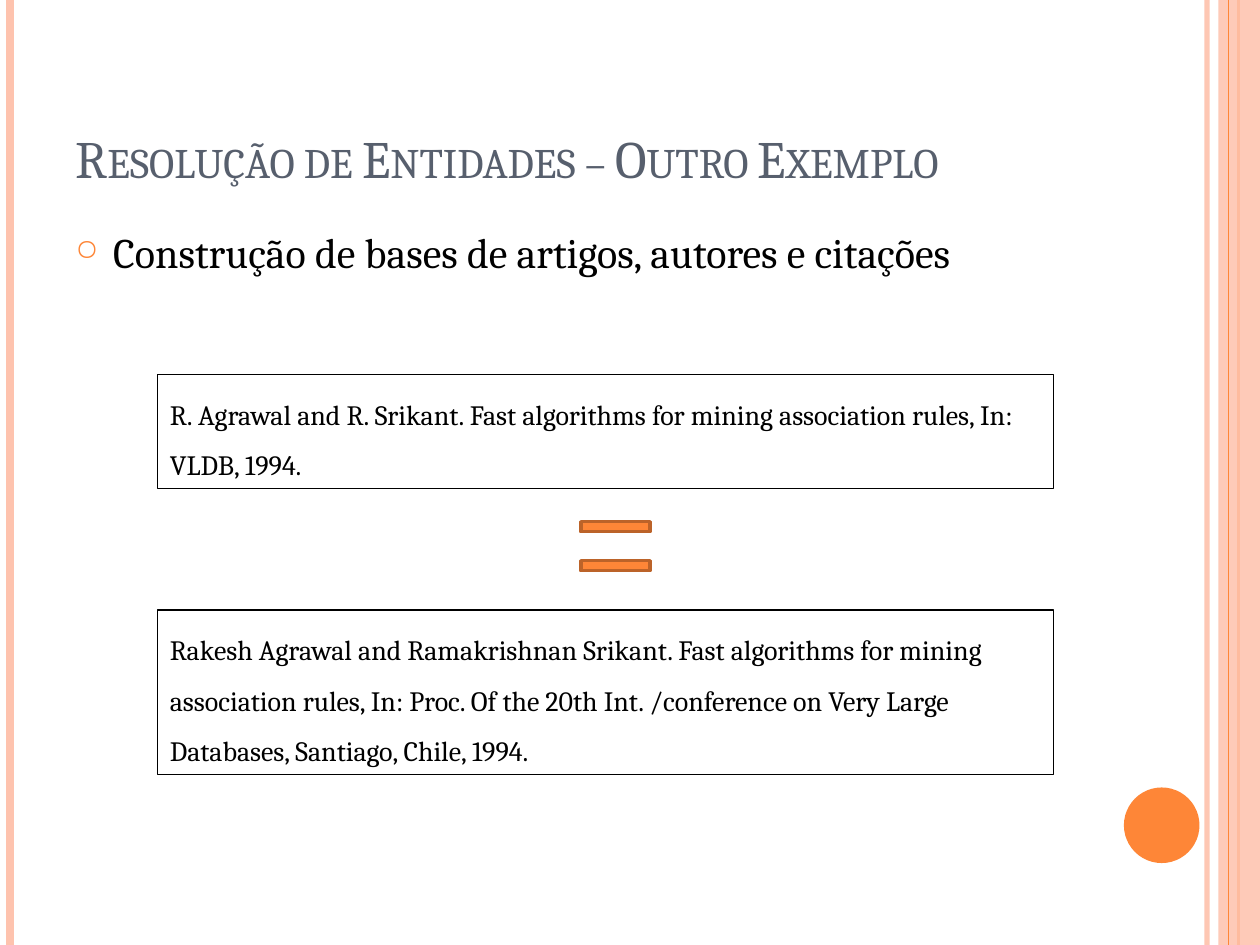
from dataclasses import dataclass

from lxml import etree
from pptx import Presentation
from pptx import util as u
from pptx.dml.color import RGBColor
from pptx.enum import shapes, text
from pptx.oxml import ns

ORANGE = RGBColor(0xFE, 0x86, 0x37)
DARK_ORANGE = RGBColor(0xBC, 0x63, 0x29)
PEACH = RGBColor(0xFE, 0xC3, 0xAE)
SLATE = RGBColor(0x57, 0x5F, 0x6D)
BLACK = RGBColor(0, 0, 0)
SLIDE_HEIGHT = 7.5
FONT = "Cambria"


@dataclass(frozen=True)
class Box:
    left: float
    top: float
    width: float
    height: float

    def lengths(self):
        return [u.Inches(n) for n in (self.left, self.top, self.width, self.height)]


@dataclass(frozen=True)
class Stripe:
    x: float
    color: RGBColor
    weight: float
    opacity: int = 100


@dataclass(frozen=True)
class Citation:
    box: Box
    wording: str


LEFT_STRIPES = (Stripe(9.58, PEACH, 3, 93), Stripe(0.08, PEACH, 4.5), Stripe(9.83, ORANGE, 1.5))
FRONT_STRIPE = Stripe(9.75, ORANGE, 0.75)
CITATIONS = (
    Citation(
        Box(1.25, 2.97, 7.11, 0.91),
        "R. Agrawal and R. Srikant. Fast algorithms for mining association rules, In: VLDB, 1994.",
    ),
    Citation(
        Box(1.25, 4.84, 7.11, 1.31),
        "Rakesh Agrawal and Ramakrishnan Srikant. Fast algorithms for mining association rules, "
        "In: Proc. Of the 20th Int. /conference on Very Large Databases, Santiago, Chile, 1994.",
    ),
)
EQUALS_BARS = [Box(4.61, top, 0.55, 0.08) for top in (4.14, 4.45)]


def apply_format(target, values: dict):
    for name, value in values.items():
        setattr(target, name, value)


def add_element(parent, tag: str, **attributes: str):
    return etree.SubElement(parent, ns.qn(tag), attributes)


def set_opacity(drawn, percent: int):
    if percent < 100:
        color = next(drawn.element.spPr.iter(ns.qn("a:srgbClr")))
        add_element(color, "a:alpha", val=str(percent * 1000))


def draw_stripe(slide, stripe: Stripe):
    x = u.Inches(stripe.x)
    edge = slide.shapes.add_connector(
        shapes.MSO_CONNECTOR.STRAIGHT, x, 0, x, u.Inches(SLIDE_HEIGHT)
    )
    edge.line.color.rgb = stripe.color
    edge.line.width = u.Pt(stripe.weight)
    set_opacity(edge, stripe.opacity)
    add_element(edge.element.spPr, "a:effectLst")


def draw_shape(slide, box: Box, fill: RGBColor | None = None, outline: RGBColor | None = None,
               weight: float = 0.75, kind=shapes.MSO_SHAPE.RECTANGLE):
    drawn = slide.shapes.add_shape(kind, *box.lengths())
    drawn.shadow.inherit = False
    if fill is None:
        drawn.fill.background()
    else:
        drawn.fill.solid()
        drawn.fill.fore_color.rgb = fill
    if outline is None:
        drawn.line.fill.background()
    else:
        drawn.line.color.rgb = outline
        drawn.line.width = u.Pt(weight)
    return drawn


def write(holder, wording: str, size: float, color: RGBColor, anchor=text.MSO_ANCHOR.TOP,
          **paragraph_format):
    frame = holder.text_frame
    apply_format(frame, {"word_wrap": True, "vertical_anchor": anchor})
    paragraph = frame.paragraphs[0]
    apply_format(paragraph, {"alignment": text.PP_ALIGN.LEFT, **paragraph_format})
    run = paragraph.add_run()
    run.text = wording
    apply_format(run.font, {"name": FONT, "size": u.Pt(size)})
    run.font.color.rgb = color
    return paragraph


def draw_title(slide):
    title = slide.shapes.add_textbox(*Box(0.5, 0.3, 8.17, 1.25).lengths())
    heading = write(title, "Resolução de Entidades – Outro Exemplo", 30, SLATE,
                    text.MSO_ANCHOR.BOTTOM)
    heading.runs[0].font.element.set("cap", "small") if hasattr(
        heading.runs[0].font, "element"
    ) else heading.runs[0]._r.get_or_add_rPr().set("cap", "small")


def draw_topic(slide):
    body = slide.shapes.add_textbox(*Box(0.5, 1.75, 8.17, 5.33).lengths())
    topic = write(body, "Construção de bases de artigos, autores e citações", 24, BLACK)
    properties = topic._p.get_or_add_pPr()
    properties.set("marL", str(u.Inches(0.3)))
    properties.set("indent", str(u.Inches(-0.3)))
    bullet_color = add_element(properties, "a:buClr")
    add_element(bullet_color, "a:srgbClr", val=str(ORANGE))
    add_element(properties, "a:buSzPct", val="70000")
    add_element(properties, "a:buChar", char="○")


def draw_citation(slide, citation: Citation):
    frame = draw_shape(slide, citation.box, outline=BLACK)
    write(frame, citation.wording, 16, BLACK, line_spacing=1.5)


def main():
    deck = Presentation()
    apply_format(deck, {"slide_width": u.Inches(10), "slide_height": u.Inches(SLIDE_HEIGHT)})
    slide = deck.slides.add_slide(deck.slide_layouts[6])
    for stripe in LEFT_STRIPES:
        draw_stripe(slide, stripe)
    side_band = draw_shape(slide, Box(9.67, 0, 0.33, SLIDE_HEIGHT), PEACH)
    set_opacity(side_band, 87)
    draw_stripe(slide, FRONT_STRIPE)
    draw_shape(slide, Box(8.92, 6.25, 0.6, 0.6), ORANGE, kind=shapes.MSO_SHAPE.OVAL)
    draw_title(slide)
    draw_topic(slide)
    for citation in CITATIONS:
        draw_citation(slide, citation)
    for bar in EQUALS_BARS:
        draw_shape(slide, bar, ORANGE, DARK_ORANGE, 2)
    deck.save("out.pptx")


if __name__ == "__main__":
    main()
